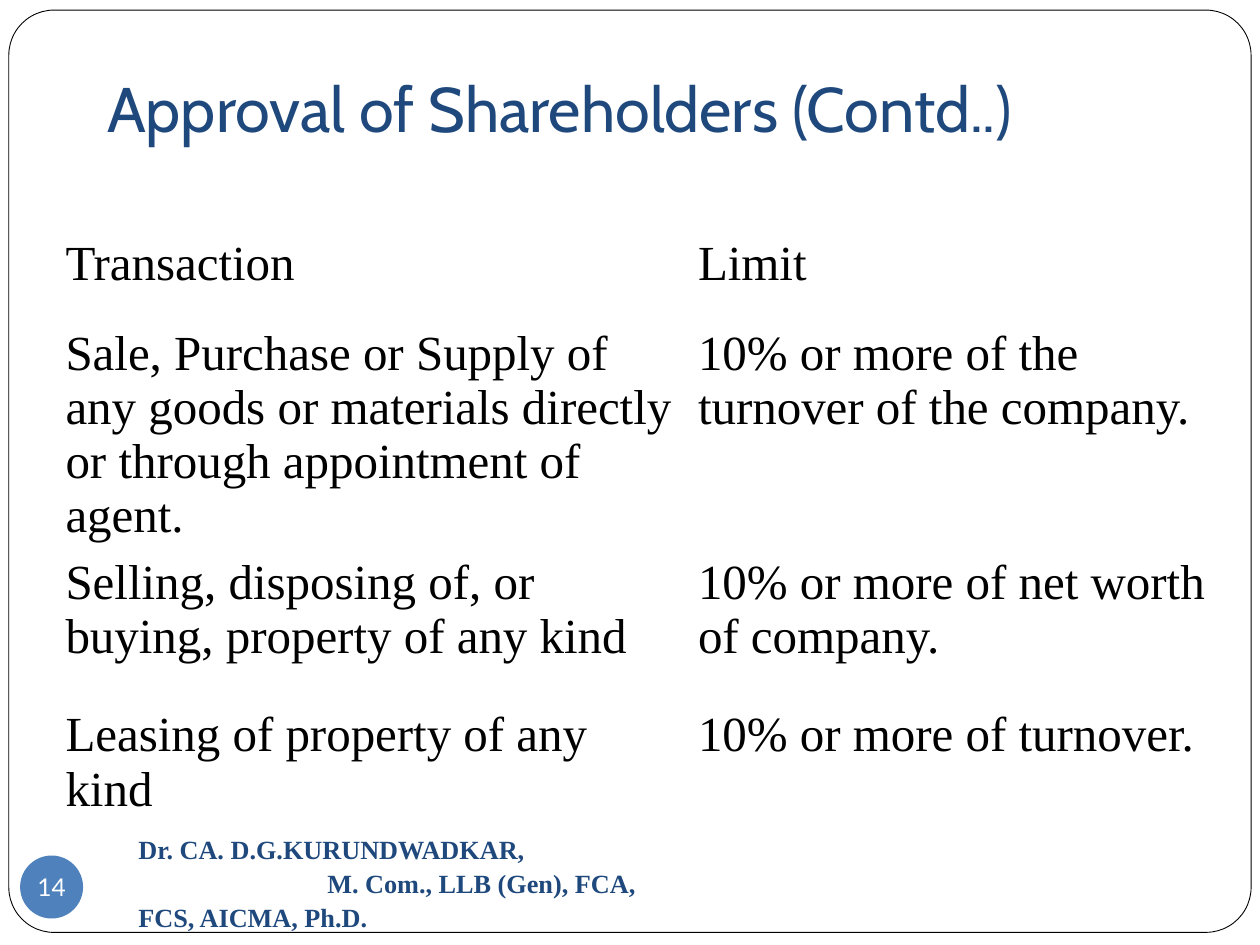
import dataclasses

import pptx
import pptx.dml.color
import pptx.enum.shapes
import pptx.enum.text
import pptx.util

ANCHOR = pptx.enum.text.MSO_ANCHOR
ALIGN = pptx.enum.text.PP_ALIGN
SHAPE = pptx.enum.shapes.MSO_SHAPE
SLIDE_WIDTH, SLIDE_HEIGHT = 10, 7.5


@dataclasses.dataclass(frozen=True)
class Theme:
    white: str = "FFFFFF"
    black: str = "000000"
    navy: str = "1F497D"
    blue: str = "4F81BD"
    title_font: str = "Cabin"
    number_font: str = "Lato"
    body_font: str = "Times New Roman"
    title_size: int = 36
    table_size: int = 28
    footer_size: int = 15
    number_size: int = 14


THEME = Theme()

COLUMN_WIDTHS = (5.02, 4.32)
ROW_HEIGHTS = (0.71, 1.75, 1.21, 0.66)
TABLE_ROWS = (
    ("Transaction", "Limit"),
    ("Sale, Purchase or Supply of any goods or materials directly "
     "or through appointment of agent.",
     "10% or more of the turnover of the company."),
    ("Selling, disposing of, or buying, property of any kind",
     "10% or more of net worth of company."),
    ("Leasing of property of any kind", "10% or more of turnover."),
)


def color(value):
    return pptx.dml.color.RGBColor.from_string(value)


def inches(*lengths):
    return [pptx.util.Inches(length) for length in lengths]


def add_run(paragraph, text, font, size, text_color, bold=False):
    run = paragraph.add_run()
    run.text = text
    run.font.name = font
    run.font.size = pptx.util.Pt(size)
    run.font.color.rgb = color(text_color)
    run.font.bold = bold


def add_filled_shape(slide, kind, box, fill):
    shape = slide.shapes.add_shape(kind, *inches(*box))
    shape.shadow.inherit = False
    shape.fill.solid()
    shape.fill.fore_color.rgb = color(fill)
    return shape


def add_frame(slide):
    frame = add_filled_shape(slide, SHAPE.ROUNDED_RECTANGLE,
                             (0.07, 0.08, 9.86, 7.32), THEME.white)
    frame.adjustments[0] = 0.049
    frame.line.color.rgb = color(THEME.black)
    frame.line.width = pptx.util.Pt(0.5)


def add_page_number(slide, number):
    badge = add_filled_shape(slide, SHAPE.OVAL, (0.16, 6.79, 0.5, 0.5), THEME.blue)
    badge.line.fill.background()
    text_frame = badge.text_frame
    text_frame.margin_left = text_frame.margin_right = 0
    text_frame.margin_top = text_frame.margin_bottom = 0
    text_frame.word_wrap = False
    text_frame.vertical_anchor = ANCHOR.MIDDLE
    paragraph = text_frame.paragraphs[0]
    paragraph.alignment = ALIGN.CENTER
    add_run(paragraph, number, THEME.number_font, THEME.number_size, THEME.white)


def add_limits_table(slide):
    box = (0.42, 1.83, sum(COLUMN_WIDTHS), sum(ROW_HEIGHTS))
    table = slide.shapes.add_table(
        len(TABLE_ROWS), len(COLUMN_WIDTHS), *inches(*box)).table
    table.first_row = table.horz_banding = False
    for column, width in zip(table.columns, COLUMN_WIDTHS):
        column.width = pptx.util.Inches(width)
    for row, height, texts in zip(table.rows, ROW_HEIGHTS, TABLE_ROWS):
        row.height = pptx.util.Inches(height)
        for cell, text in zip(row.cells, texts):
            cell.fill.background()
            add_run(cell.text_frame.paragraphs[0], text, THEME.body_font,
                    THEME.table_size, THEME.black)


def add_author(slide, name, degrees):
    text_frame = slide.shapes.add_textbox(*inches(1, 6.75, 4.33, 0.5)).text_frame
    text_frame.word_wrap = True
    text_frame.vertical_anchor = ANCHOR.MIDDLE
    name_line = text_frame.paragraphs[0]
    degrees_line = text_frame.add_paragraph()
    # The degrees start further in and wrap back to the margin
    properties = degrees_line._p.get_or_add_pPr()
    properties.set("marL", "0")
    properties.set("indent", str(pptx.util.Inches(1.5)))
    for paragraph, text in ((name_line, name), (degrees_line, degrees)):
        paragraph.line_spacing = 1.08
        add_run(paragraph, text, THEME.body_font, THEME.footer_size,
                THEME.navy, bold=True)


def set_title(slide, text):
    title = slide.shapes.title
    title.left, title.top, title.width, title.height = inches(0.75, 0.3, 8.75, 0.95)
    text_frame = title.text_frame
    text_frame.word_wrap = True
    text_frame.auto_size = pptx.enum.text.MSO_AUTO_SIZE.NONE
    text_frame.vertical_anchor = ANCHOR.BOTTOM
    text_frame.margin_bottom = pptx.util.Inches(0.1)
    paragraph = text_frame.paragraphs[0]
    paragraph.alignment = ALIGN.LEFT
    add_run(paragraph, text, THEME.title_font, THEME.title_size, THEME.navy)
    # Bring the title in front of the filled frame
    slide.shapes._spTree.append(title._element)


def main():
    presentation = pptx.Presentation()
    presentation.slide_width, presentation.slide_height = inches(
        SLIDE_WIDTH, SLIDE_HEIGHT)
    title_only = presentation.slide_layouts[5]
    slide = presentation.slides.add_slide(title_only)

    add_frame(slide)
    add_page_number(slide, "14")
    add_limits_table(slide)
    add_author(slide, "Dr. CA. D.G.KURUNDWADKAR,",
               "M. Com., LLB (Gen), FCA, FCS, AICMA, Ph.D.")
    set_title(slide, "Approval of Shareholders (Contd..)")

    presentation.save("out.pptx")


if __name__ == "__main__":
    main()
